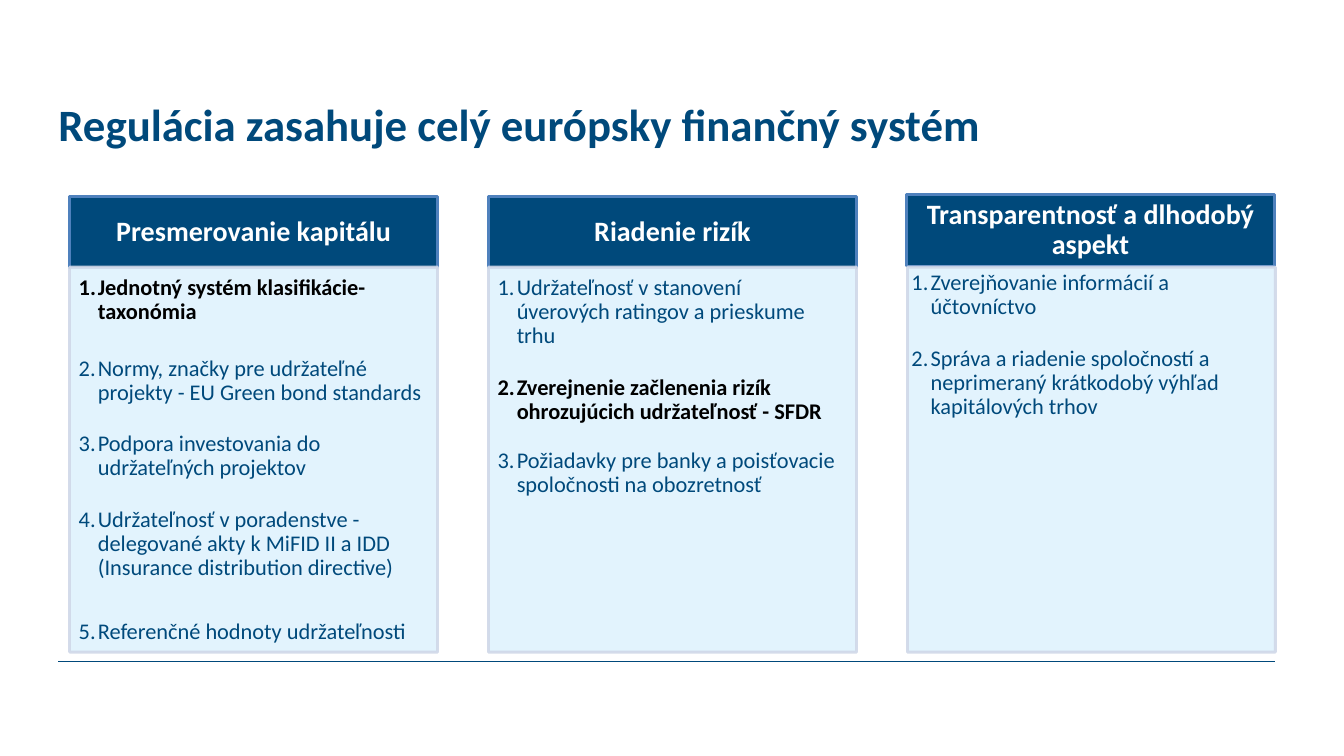
from lxml import etree
from pptx import Presentation
from pptx.dml.color import RGBColor
from pptx.enum.shapes import MSO_CONNECTOR, MSO_SHAPE
from pptx.enum.text import MSO_ANCHOR, PP_ALIGN
from pptx.oxml.ns import qn
from pptx.util import Inches, Pt

RECTANGLE = MSO_SHAPE.RECTANGLE
STRAIGHT = MSO_CONNECTOR.STRAIGHT
TOP, MIDDLE = MSO_ANCHOR.TOP, MSO_ANCHOR.MIDDLE
LEFT, CENTER = PP_ALIGN.LEFT, PP_ALIGN.CENTER

FONT = "Calibri"
NAVY, WHITE, BLACK = "00497B", "FFFFFF", "000000"
HEADER_LINE, BODY_FILL, BODY_LINE = "4F81BD", "DFF2FD", "D0D8E8"

MARGIN, CONTENT_WIDTH = 0.58, 12.07
FIRST_COLUMN, COLUMN_PITCH, COLUMN_WIDTH = 0.69, 4.155, 3.65
HEADER_HEIGHT, BODY_TOP, BODY_HEIGHT = 0.71, 2.65, 3.82
NUMBER_INDENT = 0.19

WIDE_INSETS = (0.09, 0.09, 0.12, 0.14)
NARROW_INSETS = (0.04, 0.04, 0.05, 0.06)

# Heading, header left shift and top, body insets, items as (text, emphasised, points after)
columns = [
    ("Presmerovanie kapitálu", 0, 1.95, WIDE_INSETS, [
        ("Jednotný systém klasifikácie- taxonómia", True, 23),
        ("Normy, značky pre udržateľné projekty - EU Green bond standards", False, 19.5),
        ("Podpora investovania do udržateľných projektov", False, 19.5),
        ("Udržateľnosť v poradenstve - delegované akty k MiFID II a IDD "
         "(Insurance distribution directive)", False, 28.5),
        ("Referenčné hodnoty udržateľnosti", False, 0),
    ]),
    ("Riadenie rizík", 0, 1.95, WIDE_INSETS, [
        ("Udržateľnosť v stanovení\vúverových ratingov a prieskume trhu", False, 19.5),
        ("Zverejnenie začlenenia rizík ohrozujúcich udržateľnosť - SFDR", True, 17.5),
        ("Požiadavky pre banky a poisťovacie spoločnosti na obozretnosť", False, 0),
    ]),
    ("Transparentnosť a dlhodobý aspekt", 0.01, 1.93, NARROW_INSETS, [
        ("Zverejňovanie informácií a účtovníctvo", False, 19.5),
        ("Správa a riadenie spoločností a neprimeraný krátkodobý výhľad "
         "kapitálových trhov", False, 0),
    ]),
]


def color(value):
    return RGBColor.from_string(value)


def add_panel(left, top, height, fill, line, insets, anchor):
    """Add one column-wide rectangle ready to hold text."""
    panel = slide.shapes.add_shape(
        RECTANGLE, Inches(left), Inches(top), Inches(COLUMN_WIDTH), Inches(height))
    panel.shadow.inherit = False
    panel.fill.solid()
    panel.fill.fore_color.rgb = color(fill)
    panel.line.color.rgb = color(line)
    panel.line.width = Pt(2)
    frame = panel.text_frame
    frame.word_wrap = True
    frame.vertical_anchor = anchor
    (frame.margin_left, frame.margin_top,
     frame.margin_right, frame.margin_bottom) = map(Inches, insets)
    return panel


presentation = Presentation()
presentation.slide_width = Inches(13.33)
presentation.slide_height = Inches(7.5)
slide = presentation.slides.add_slide(presentation.slide_layouts[6])

footer_rule = slide.shapes.add_connector(
    STRAIGHT, Inches(MARGIN), Inches(6.56), Inches(MARGIN + CONTENT_WIDTH), Inches(6.56))
footer_rule.line.color.rgb = color(NAVY)
footer_rule.line.width = Pt(1)
etree.SubElement(footer_rule._element.spPr, qn("a:effectLst"))

title = slide.shapes.add_textbox(
    Inches(MARGIN), Inches(0.28), Inches(CONTENT_WIDTH), Inches(1.89))
title_frame = title.text_frame
title_frame.word_wrap = True
title_frame.vertical_anchor = MIDDLE
title_frame.margin_left = title_frame.margin_right = 0
title_frame.margin_top = title_frame.margin_bottom = 0
title_frame.text = "Regulácia zasahuje celý európsky finančný systém"
title_font = title_frame.paragraphs[0].runs[0].font
title_font.name, title_font.size, title_font.bold = FONT, Pt(32), True
title_font.color.rgb = color(NAVY)

for index, (heading, header_shift, header_top, insets, items) in enumerate(columns):
    left = FIRST_COLUMN + index * COLUMN_PITCH

    header = add_panel(left - header_shift, header_top, HEADER_HEIGHT, NAVY, HEADER_LINE,
                       (0.16, 0.09, 0.16, 0.09), MIDDLE)
    header.text_frame.text = heading
    paragraph = header.text_frame.paragraphs[0]
    paragraph.alignment = CENTER
    paragraph.line_spacing = 0.9
    font = paragraph.runs[0].font
    font.name, font.size, font.bold = FONT, Pt(20), True
    font.color.rgb = color(WHITE)

    body = add_panel(left, BODY_TOP, BODY_HEIGHT, BODY_FILL, BODY_LINE, insets, TOP)
    for solid_color in body._element.spPr.iter(qn("a:srgbClr")):
        etree.SubElement(solid_color, qn("a:alpha"), val="90000")

    body.text_frame.text = "\n".join(text for text, _, _ in items)
    for paragraph, (_, emphasised, gap) in zip(body.text_frame.paragraphs, items):
        paragraph.alignment = LEFT
        paragraph.line_spacing = 0.9
        paragraph.space_after = Pt(gap)
        properties = paragraph._p.get_or_add_pPr()
        properties.set("marL", str(Inches(NUMBER_INDENT)))
        properties.set("indent", str(-Inches(NUMBER_INDENT)))
        etree.SubElement(properties, qn("a:buFont"), typeface="+mj-lt")
        etree.SubElement(properties, qn("a:buAutoNum"), type="arabicPeriod")
        for run in paragraph.runs:
            run.font.name, run.font.size, run.font.bold = FONT, Pt(16), emphasised
            run.font.color.rgb = color(BLACK if emphasised else NAVY)

presentation.save("out.pptx")
